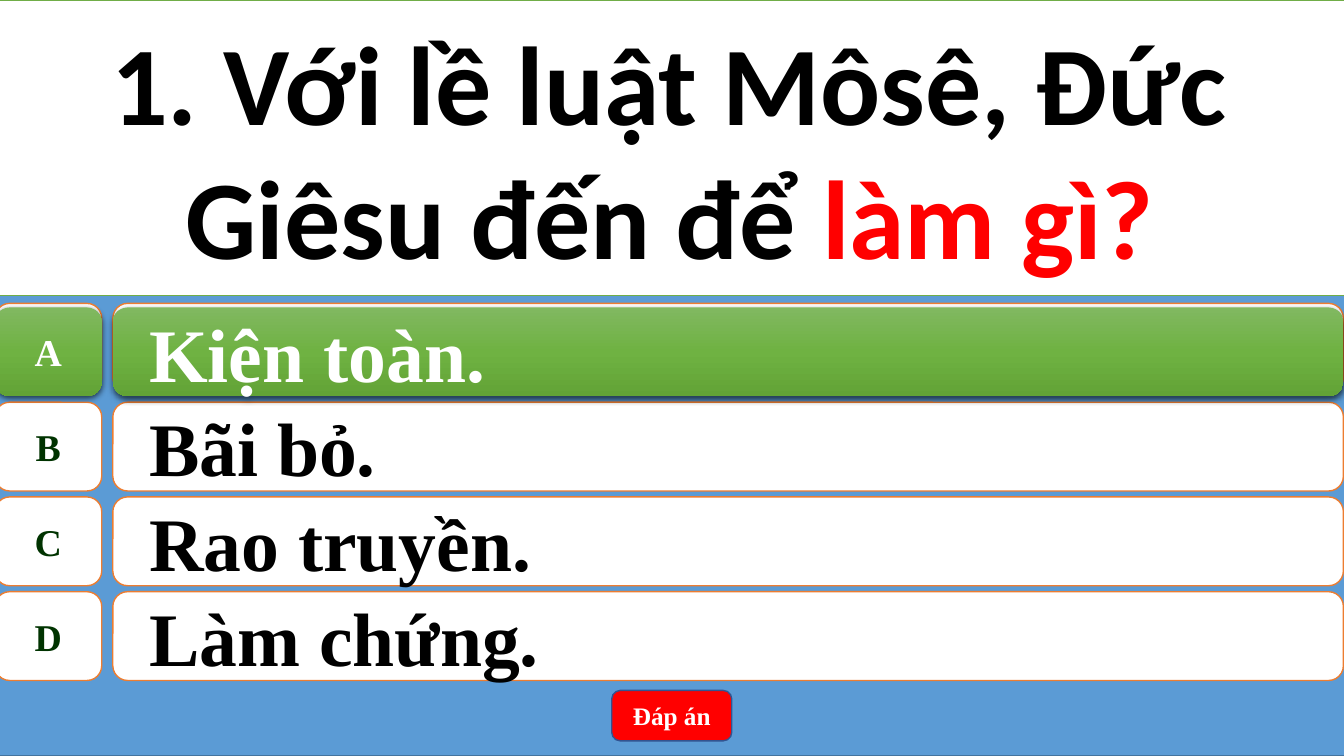
from lxml import etree
from pptx import Presentation
from pptx import util as u
from pptx.dml.color import RGBColor
from pptx.enum import shapes, text
from pptx.oxml.ns import nsdecls

QUESTION = [("1. Với lề luật Môsê, Đức Giêsu đến để ", "000000"), ("làm gì?", "FF0000")]
ANSWERS = [("A", "Kiện toàn."), ("B", "Bãi bỏ."), ("C", "Rao truyền."), ("D", "Làm chứng.")]
CORRECT = 0
BUTTON = "Đáp án"
SERIF = "Times New Roman"
GREENS = [(0, "81B861"), (50, "6FB242"), (100, "62A336")]

WIDTH, HEIGHT = 960, 540
LEFT, FULL = -3.6, 964
ROW_TOP, ROW_PITCH, ROW_HEIGHT = 219.6, 67.68, 63.4
LETTER_WIDTH, ANSWER_LEFT, ANSWER_WIDTH = 76.3, 80.6, 879
MARGIN, INDENT = 36, -20.2

KIND = shapes.MSO_SHAPE
CENTER = text.PP_ALIGN.CENTER


def color(value):
    return RGBColor.from_string(value)


def add_box(kind, x, y, w, h, fill=None, line=None):
    sp = s.shapes.add_shape(kind, u.Pt(x), u.Pt(y), u.Pt(w), u.Pt(h))
    sp.shadow.inherit = False
    if fill:
        sp.fill.solid()
        sp.fill.fore_color.rgb = color(fill)
    if line:
        sp.line.color.rgb = color(line)
        sp.line.width = u.Pt(1)
    else:
        sp.line.fill.background()
    return sp


def add_text(sp, runs, size, font, align=CENTER, wrap=True):
    tf = sp.text_frame
    tf.word_wrap = wrap
    tf.vertical_anchor = text.MSO_ANCHOR.MIDDLE
    p = tf.paragraphs[0]
    p.alignment = align
    for words, ink in runs:
        r = p.add_run()
        r.text = words
        r.font.size = u.Pt(size)
        r.font.name = font
        r.font.bold = True
        r.font.color.rgb = color(ink)
    return p


def make_glossy(sp):
    stops = "".join(f'<a:gs pos="{pos * 1000}"><a:srgbClr val="{c}"/></a:gs>' for pos, c in GREENS)
    grad = etree.fromstring(
        f'<a:gradFill {nsdecls("a")} rotWithShape="1"><a:gsLst>{stops}</a:gsLst>'
        '<a:lin ang="5400000" scaled="0"/></a:gradFill>')
    shadow = etree.fromstring(
        f'<a:outerShdw {nsdecls("a")} blurRad="{u.Pt(4.5)}" dist="{u.Pt(1.5)}" dir="5400000" '
        'algn="ctr" rotWithShape="0"><a:srgbClr val="000000"><a:alpha val="63000"/>'
        '</a:srgbClr></a:outerShdw>')
    props = sp._element.spPr
    props.find("{*}prstGeom").addnext(grad)
    props.find("{*}effectLst").append(shadow)


def add_answer(letter, answer, y, chosen=False):
    fill, line = (None, None) if chosen else ("FFFFFF", "ED7D31")
    tag = add_box(KIND.FLOWCHART_ALTERNATE_PROCESS, LEFT, y, LETTER_WIDTH, ROW_HEIGHT, fill, line)
    bar = add_box(KIND.ROUNDED_RECTANGLE, ANSWER_LEFT, y, ANSWER_WIDTH, ROW_HEIGHT, fill, line)
    if chosen:
        make_glossy(tag)
        make_glossy(bar)
    add_text(tag, [(letter, "FFFFFF" if chosen else "003300")], 27, SERIF, wrap=False)
    p = add_text(bar, [(answer, "FFFFFF" if chosen else "000000")], 54, SERIF, text.PP_ALIGN.LEFT)
    p.level = 1
    props = p._p.get_or_add_pPr()
    props.set("marL", str(u.Pt(MARGIN)))
    props.set("indent", str(u.Pt(INDENT)))


prs = Presentation()
prs.slide_width, prs.slide_height = u.Pt(WIDTH), u.Pt(HEIGHT)
s = prs.slides.add_slide(prs.slide_layouts[6])

add_box(KIND.RECTANGLE, LEFT, 0, FULL, HEIGHT, "5B9BD5", "43739E")
for i, (letter, answer) in enumerate(ANSWERS):
    lift = 2.9 if i == CORRECT else 0
    add_answer(letter, answer, ROW_TOP + i * ROW_PITCH - lift)
add_answer(*ANSWERS[CORRECT], ROW_TOP + CORRECT * ROW_PITCH, chosen=True)

button = add_box(KIND.ROUNDED_RECTANGLE, 437, 493.2, 85.7, 36, "FF0000", "325491")
add_text(button, [(BUTTON, "FFFFFF")], 18, SERIF)

title = add_box(KIND.RECTANGLE, LEFT, 0, FULL, 211, "FFFFFF", "70AD47")
add_text(title, QUESTION, 80, "Calibri")

prs.save("out.pptx")
